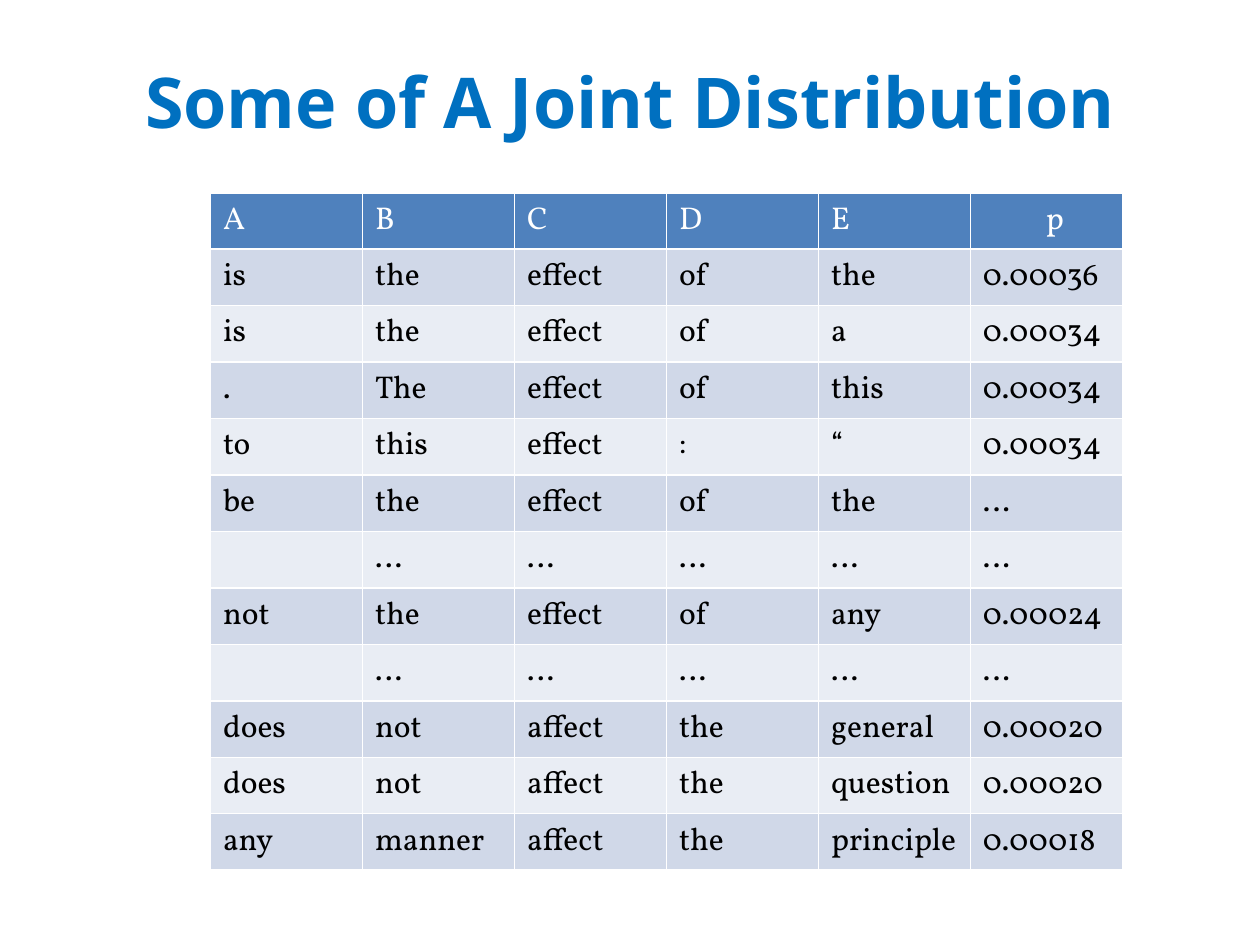
from pptx import Presentation
from pptx.dml.color import RGBColor
from pptx.enum import text
from pptx.util import Inches, Pt

COLORS = {
    "title": "0070C0",
    "header": "4F81BD",
    "header_text": "FFFFFF",
    "body_text": "000000",
    "odd": "D0D8E8",
    "even": "E9EDF4",
}
ROWS = [
    ["A", "B", "C", "D", "E", "p"],
    ["is", "the", "effect", "of", "the", "0.00036"],
    ["is", "the", "effect", "of", "a", "0.00034"],
    [".", "The", "effect", "of", "this", "0.00034"],
    ["to", "this", "effect", ":", "“", "0.00034"],
    ["be", "the", "effect", "of", "the", "…"],
    ["", "…", "…", "…", "…", "…"],
    ["not", "the", "effect", "of", "any", "0.00024"],
    ["", "…", "…", "…", "…", "…"],
    ["does", "not", "affect", "the", "general", "0.00020"],
    ["does", "not", "affect", "the", "question", "0.00020"],
    ["any", "manner", "affect", "the", "principle", "0.00018"],
]
TITLE_FONT = {"name": "Open Sans", "size": Pt(40), "bold": True}
CELL_FONT = {"name": "Vollkorn", "size": Pt(18), "bold": False}


def write(p, words, font, color):
    r = p.add_run()
    r.text = words
    for key, value in font.items():
        setattr(r.font, key, value)
    r.font.color.rgb = RGBColor.from_string(COLORS[color])


prs = Presentation()
prs.slide_width = Inches(10)
prs.slide_height = Inches(7.5)
s = prs.slides.add_slide(prs.slide_layouts[6])

sp = s.shapes.add_textbox(Inches(0.5), Inches(0.3), Inches(9), Inches(0.99))
tf = sp.text_frame
tf.word_wrap = True
tf.vertical_anchor = text.MSO_ANCHOR.MIDDLE
p = tf.paragraphs[0]
p.alignment = text.PP_ALIGN.CENTER
write(p, "Some of A Joint Distribution", TITLE_FONT, "title")

sp = s.shapes.add_table(len(ROWS), len(ROWS[0]), Inches(1.67), Inches(1.53),
                        Inches(7.24), Inches(5.38))
table = sp.table
for i, row in enumerate(ROWS):
    fill = "header" if i == 0 else "odd" if i % 2 else "even"
    color = "header_text" if i == 0 else "body_text"
    for j, words in enumerate(row):
        cell = table.cell(i, j)
        cell.fill.solid()
        cell.fill.fore_color.rgb = RGBColor.from_string(COLORS[fill])
        p = cell.text_frame.paragraphs[0]
        p.font.size = CELL_FONT["size"]
        if words:
            write(p, words, CELL_FONT, color)
table.cell(0, 5).margin_left = Inches(0.6)

prs.save("out.pptx")
